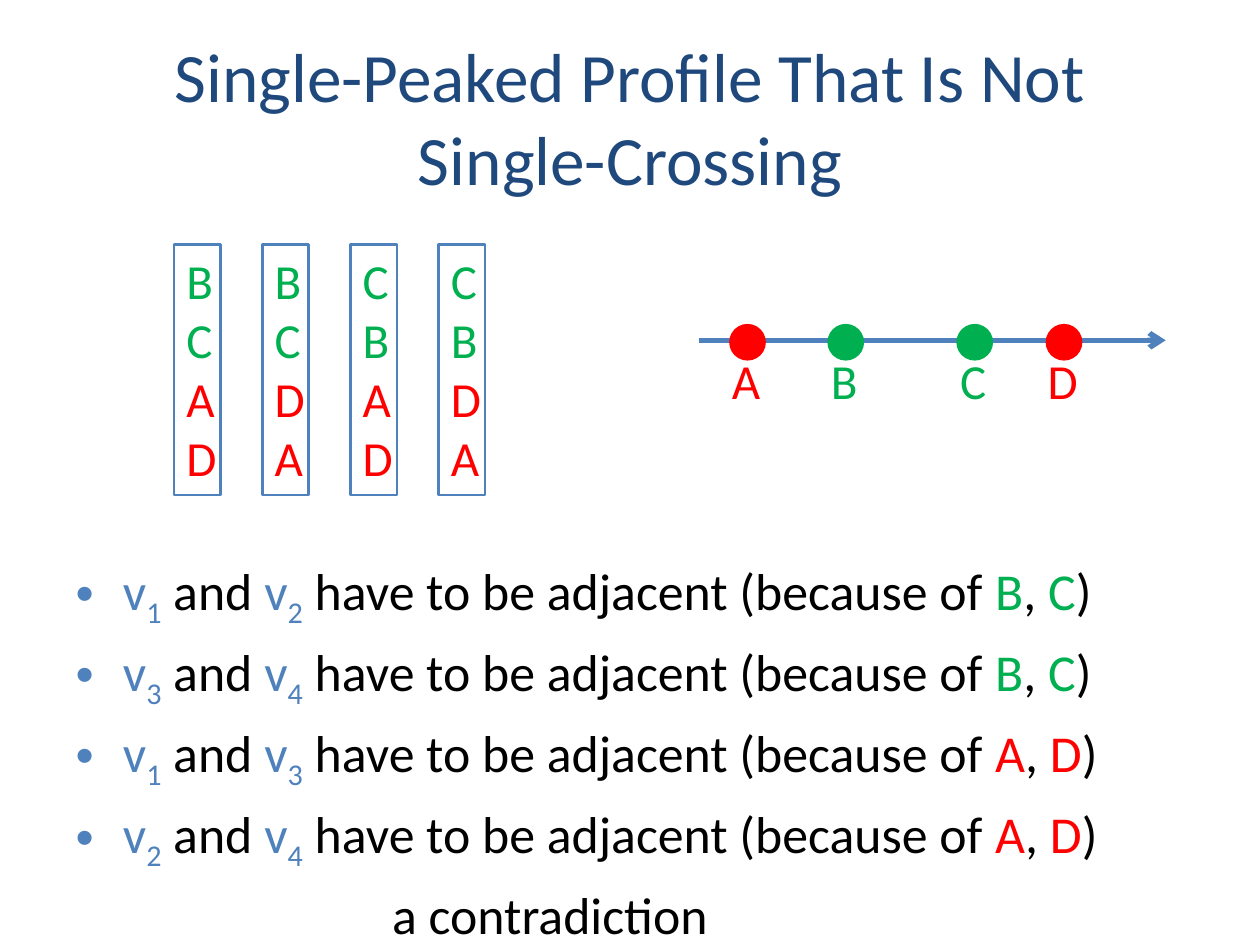
from lxml.etree import SubElement
from pptx import Presentation
from pptx.dml.color import RGBColor
from pptx.enum.shapes import MSO_CONNECTOR, MSO_SHAPE
from pptx.enum.text import MSO_ANCHOR, MSO_AUTO_SIZE, PP_ALIGN
from pptx.oxml.ns import qn
from pptx.util import Cm, Pt

NAVY = RGBColor(0x1F, 0x49, 0x7D)
BLUE = RGBColor(0x4F, 0x81, 0xBD)
BLACK = RGBColor(0, 0, 0)
GREEN = RGBColor(0, 0xB0, 0x50)
RED = RGBColor(0xFF, 0, 0)
CANDIDATE_COLORS = {"A": RED, "B": GREEN, "C": GREEN, "D": RED}

VOTES = ["BCAD", "BCDA", "CBAD", "CBDA"]
CANDIDATE_OFFSETS = {"A": 0.97, "B": 2.95, "C": 5.55, "D": 7.35}
ADJACENT_PAIRS = [("1", "2", "BC"), ("3", "4", "BC"),
                  ("1", "3", "AD"), ("2", "4", "AD")]


def add_span(para, text, size, color, subscript=False):
    span = para.add_run()
    span.text = text
    span.font.name = "Calibri"
    span.font.size = Pt(size)
    span.font.color.rgb = color
    if subscript:
        span.font._element.set("baseline", "-25000")


def place(shape, left, top, width, height):
    shape.left, shape.top = Cm(left), Cm(top)
    shape.width, shape.height = Cm(width), Cm(height)


def fill_title(title, left, top, width, height):
    place(title, left, top, width, height)
    frame = title.text_frame
    frame.auto_size = MSO_AUTO_SIZE.NONE
    frame.vertical_anchor = MSO_ANCHOR.MIDDLE
    para = frame.paragraphs[0]
    para.alignment = PP_ALIGN.CENTER
    add_span(para, "Single-Peaked Profile That Is Not Single-Crossing", 39.6, NAVY)


def add_votes(page, left, top, width, height):
    """Boxes narrow enough to hold one candidate on each line."""
    box_width = 0.94
    step = (width - box_width) / (len(VOTES) - 1)
    for index, vote in enumerate(VOTES):
        box = page.shapes.add_shape(
            MSO_SHAPE.RECTANGLE, Cm(left + index * step), Cm(top),
            Cm(box_width), Cm(height))
        box.shadow.inherit = False
        box.fill.background()
        box.line.color.rgb = BLUE
        box.line.width = Pt(1.5)
        frame = box.text_frame
        frame.word_wrap = True
        frame.vertical_anchor = MSO_ANCHOR.TOP
        para = frame.paragraphs[0]
        para.alignment = PP_ALIGN.LEFT
        for pair in (vote[:2], vote[2:]):
            add_span(para, pair, 28, CANDIDATE_COLORS[pair[0]])


def add_axis(page, left, top, width):
    group = page.shapes.add_group_shape()

    # Arrow
    arrow = group.shapes.add_connector(
        MSO_CONNECTOR.STRAIGHT, Cm(left), Cm(top), Cm(left + width), Cm(top))
    arrow.line.color.rgb = BLUE
    arrow.line.width = Pt(3)
    SubElement(arrow.line._get_or_add_ln(), qn("a:tailEnd"), type="arrow")
    SubElement(arrow._element.spPr, qn("a:effectLst"))

    # Candidates and their names
    dot_size, label_width = 0.74, 1.1
    for name, offset in CANDIDATE_OFFSETS.items():
        center = left + offset
        dot = group.shapes.add_shape(
            MSO_SHAPE.OVAL, Cm(center - dot_size / 2), Cm(top - 0.33),
            Cm(dot_size), Cm(dot_size))
        dot.shadow.inherit = False
        dot.fill.solid()
        dot.fill.fore_color.rgb = CANDIDATE_COLORS[name]
        dot.line.fill.background()
        label = group.shapes.add_textbox(
            Cm(center - label_width / 2 - 0.03), Cm(top + 0.08),
            Cm(label_width), Cm(1.45))
        label.text_frame.word_wrap = False
        para = label.text_frame.paragraphs[0]
        para.alignment = PP_ALIGN.CENTER
        add_span(para, name, 28, CANDIDATE_COLORS[name])


def fill_argument(body, left, top, width, height):
    place(body, left, top, width, height)
    frame = body.text_frame
    frame.auto_size = MSO_AUTO_SIZE.NONE
    size = 29.6

    # Bulleted steps
    for index, (first, second, (one, other)) in enumerate(ADJACENT_PAIRS):
        para = frame.add_paragraph() if index else frame.paragraphs[0]
        add_span(para, "v", size, BLUE)
        add_span(para, first, size, BLUE, subscript=True)
        add_span(para, " and ", size, BLACK)
        add_span(para, "v", size, BLUE)
        add_span(para, second, size, BLUE, subscript=True)
        add_span(para, " have to be adjacent (because of ", size, BLACK)
        add_span(para, one, size, CANDIDATE_COLORS[one])
        add_span(para, ", ", size, BLACK)
        add_span(para, other, size, CANDIDATE_COLORS[other])
        add_span(para, ")", size, BLACK)

    # Conclusion, indented without a bullet
    para = frame.add_paragraph()
    add_span(para, "a contradiction", size, BLACK)
    properties = para._p.get_or_add_pPr()
    properties.set("marL", str(Cm(6.38)))
    properties.set("indent", "0")
    SubElement(properties, qn("a:buNone"))


def main():
    deck = Presentation()
    deck.slide_width, deck.slide_height = Cm(25.4), Cm(19.05)
    page = deck.slides.add_slide(deck.slide_layouts[1])
    fill_title(page.shapes.title, 1.27, 0.76, 22.86, 3.18)
    fill_argument(page.placeholders[1], 1.27, 11.13, 22.86, 7.39)
    add_votes(page, 3.51, 4.93, 6.27, 5.05)
    add_axis(page, 14.1, 6.86, 9.4)
    deck.save("out.pptx")


if __name__ == "__main__":
    main()
